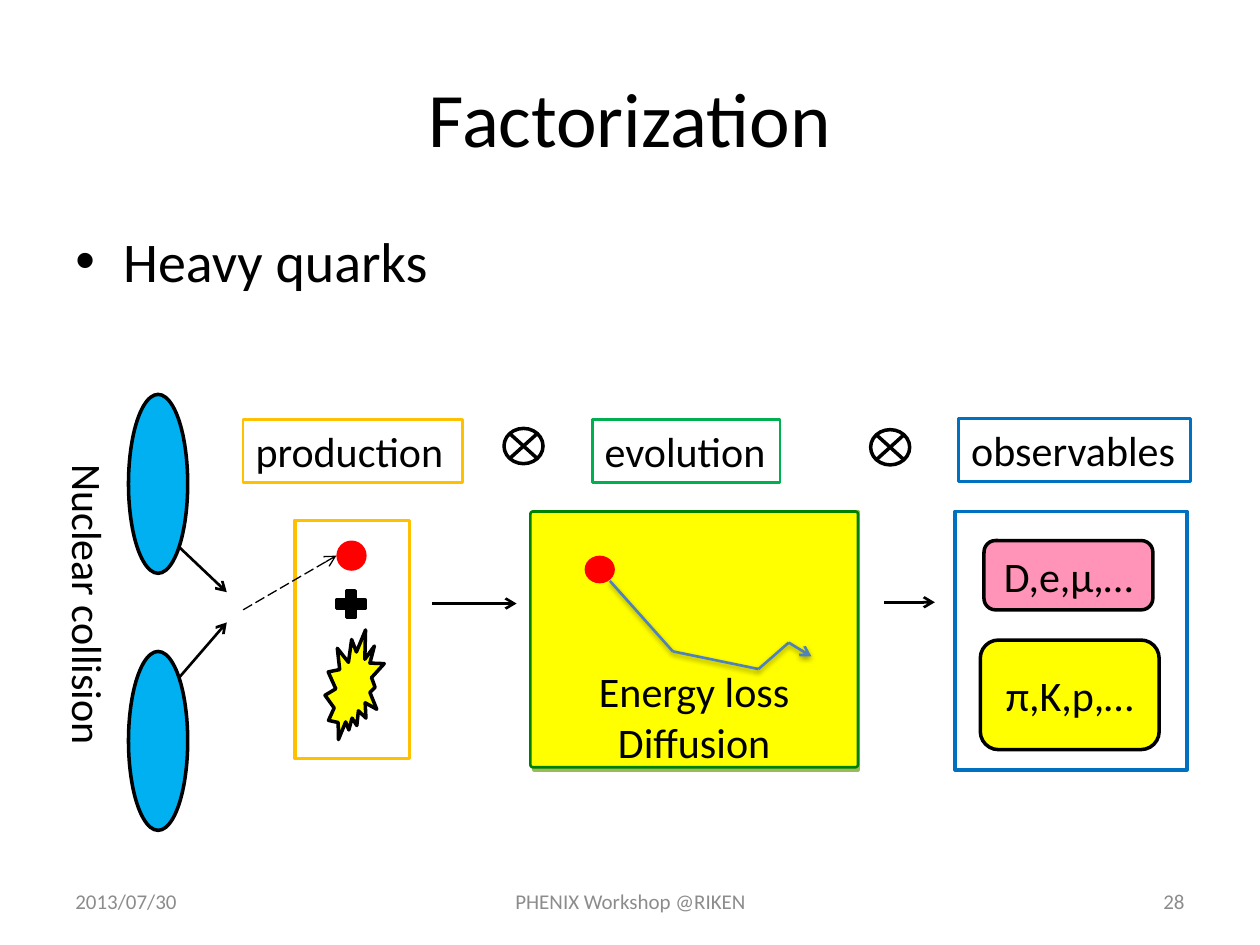
from lxml import etree
from pptx import Presentation
from pptx.dml.color import RGBColor
from pptx.enum.dml import MSO_LINE
from pptx.enum.shapes import MSO_CONNECTOR, MSO_SHAPE
from pptx.enum.text import MSO_ANCHOR, MSO_AUTO_SIZE, PP_ALIGN
from pptx.oxml.ns import qn
from pptx.util import Emu, Pt

PX = 9144  # EMU in one px, 100 px to the inch
FONT = "Calibri"

BLACK = RGBColor(0x00, 0x00, 0x00)
WHITE = RGBColor(0xFF, 0xFF, 0xFF)
GREY = RGBColor(0x8C, 0x8C, 0x8C)
SKY = RGBColor(0x00, 0xB0, 0xF0)
BLUE = RGBColor(0x00, 0x70, 0xC0)
STEEL = RGBColor(0x4F, 0x81, 0xBD)
GREEN = RGBColor(0x00, 0xB0, 0x50)
DARK_GREEN = RGBColor(0x00, 0x80, 0x00)
OLIVE = RGBColor(0x9B, 0xBB, 0x59)
AMBER = RGBColor(0xFF, 0xC0, 0x00)
YELLOW = RGBColor(0xFF, 0xFF, 0x00)
RED = RGBColor(0xFF, 0x00, 0x00)
PINK = RGBColor(0xFF, 0x93, 0xB8)

ELLIPSE = MSO_SHAPE.OVAL
RECT = MSO_SHAPE.RECTANGLE
ROUNDED = MSO_SHAPE.ROUNDED_RECTANGLE
BURST = MSO_SHAPE.EXPLOSION2
PLUS = MSO_SHAPE.MATH_PLUS
TENSOR = MSO_SHAPE.FLOWCHART_SUMMING_JUNCTION
STRAIGHT = MSO_CONNECTOR.STRAIGHT
LONG_DASH = MSO_LINE.LONG_DASH
TOP, MIDDLE, BOTTOM = MSO_ANCHOR.TOP, MSO_ANCHOR.MIDDLE, MSO_ANCHOR.BOTTOM
LEFT, CENTER, RIGHT = PP_ALIGN.LEFT, PP_ALIGN.CENTER, PP_ALIGN.RIGHT
GROW = MSO_AUTO_SIZE.SHAPE_TO_FIT_TEXT


def px(*lengths):
    return [Emu(length * PX) for length in lengths]


def write(shape, text, size=24, color=BLACK, align=LEFT, anchor=TOP, wrap=True):
    frame = shape.text_frame
    frame.text = text
    frame.word_wrap = wrap
    frame.vertical_anchor = anchor
    font_format = {"name": FONT, "size": Pt(size)}
    for para in frame.paragraphs:
        para.alignment = align
        for span in para.runs:
            for name, value in font_format.items():
                setattr(span.font, name, value)
            span.font.color.rgb = color


def add_text(page, box, text, **text_format):
    shape = page.shapes.add_textbox(*px(*box))
    write(shape, text, **text_format)
    return shape


def add_label(page, box, text, border=None):
    """Text in a box that fits it, with an optional border."""
    shape = add_text(page, box, text, wrap=False)
    shape.text_frame.auto_size = GROW
    if border is not None:
        shape.line.color.rgb = border
        shape.line.width = Pt(1.5)
    return shape


def add_shape(page, kind, box, fill=None, line=None, width=2):
    shape = page.shapes.add_shape(kind, *px(*box))
    shape.shadow.inherit = False
    if fill is None:
        shape.fill.background()
    else:
        shape.fill.solid()
        shape.fill.fore_color.rgb = fill
    if line is None:
        shape.line.fill.background()
    else:
        shape.line.color.rgb = line
        shape.line.width = Pt(width)
    return shape


def add_line(page, start, end, color=BLACK, width=1.5, dash=None, arrow=True, shadow=False):
    connector = page.shapes.add_connector(STRAIGHT, *px(*start, *end))
    connector.line.color.rgb = color
    connector.line.width = Pt(width)
    if dash is not None:
        connector.line.dash_style = dash
    properties = connector._element.spPr
    if arrow:
        etree.SubElement(properties.find(qn("a:ln")), qn("a:tailEnd"), type="arrow")
    effects = etree.SubElement(properties, qn("a:effectLst"))
    if shadow:
        outer = etree.SubElement(effects, qn("a:outerShdw"), blurRad=str(Pt(3.1)),
                                 dist=str(Pt(1.6)), dir="5400000", rotWithShape="0")
        black = etree.SubElement(outer, qn("a:srgbClr"), val=str(BLACK))
        etree.SubElement(black, qn("a:alpha"), val="38000")


def add_bullet(page, box, text):
    shape = add_text(page, box, text, size=32)
    properties = shape.text_frame.paragraphs[0]._p.get_or_add_pPr()
    indent = 38 * PX
    properties.set("marL", str(indent))
    properties.set("indent", str(-indent))
    before = etree.SubElement(properties, qn("a:spcBef"))
    etree.SubElement(before, qn("a:spcPct"), val="20000")
    etree.SubElement(properties, qn("a:buFont"), typeface="Arial")
    etree.SubElement(properties, qn("a:buChar"), char="•")


def add_page_text(page):
    title = page.shapes.title
    title.left, title.top, title.width, title.height = px(50, 30, 900, 125)
    write(title, "Factorization", size=44, align=CENTER, anchor=MIDDLE)
    add_bullet(page, (50, 175, 900, 495), "Heavy quarks")
    for left, width, text, align in (
        (50, 233, "2013/07/30", LEFT),
        (342, 317, "PHENIX Workshop @RIKEN", CENTER),
        (717, 233, "28", RIGHT),
    ):
        add_text(page, (left, 695, width, 40), text,
                 size=12, color=GREY, align=align, anchor=MIDDLE)


def add_collision(page):
    for top in (313, 517):
        add_shape(page, ELLIPSE, (102, top, 47, 142), SKY, BLACK)
    for start, end in (((142, 434), (180, 470)), ((142, 538), (180, 494))):
        add_line(page, start, end)
    add_label(page, (-52, 456, 245, 50), "Nuclear collision").rotation = 90


def add_production(page):
    add_label(page, (193, 333, 174, 50), "production", AMBER)
    add_shape(page, BURST, (258, 500, 47, 87), YELLOW, BLACK)
    add_shape(page, ELLIPSE, (267, 429, 24, 24), RED)
    add_shape(page, PLUS, (263, 465, 31, 29), BLACK, BLACK)
    add_shape(page, RECT, (234, 413, 91, 189), line=AMBER)
    add_line(page, (193, 484), (267, 441), width=0.75, dash=LONG_DASH)


def add_evolution(page):
    add_label(page, (470, 333, 149, 50), "evolution", GREEN)
    add_shape(page, RECT, (424, 406, 257, 205), WHITE, OLIVE)
    medium = add_shape(page, ROUNDED, (421, 406, 260, 203), YELLOW, DARK_GREEN, 1.5)
    medium.adjustments[0] = 0.01
    write(medium, "Energy loss\nDiffusion", align=CENTER, anchor=BOTTOM)
    medium.text_frame.margin_bottom = 0
    add_shape(page, ELLIPSE, (464, 441, 24, 22), RED)
    track = [(484, 461), (534, 517), (602, 531), (626, 510), (644, 521)]
    for start, end in zip(track, track[1:]):
        add_line(page, start, end, STEEL, arrow=end == track[-1], shadow=True)


def add_observables(page):
    add_label(page, (761, 332, 184, 50), "observables", BLUE)
    for box, fill, text in (
        ((778, 508, 142, 87), YELLOW, "π,K,p,…"),
        ((781, 429, 134, 55), PINK, "D,e,μ,…"),
    ):
        particles = add_shape(page, ROUNDED, box, fill, BLACK)
        write(particles, text, align=CENTER, anchor=MIDDLE)
    add_shape(page, RECT, (758, 406, 184, 205), line=BLUE)


def add_links(page):
    for start, end in (((343, 479), (410, 479)), ((702, 478), (742, 478))):
        add_line(page, start, end)
    for left, top in ((400, 340), (691, 341)):
        add_shape(page, TENSOR, (left, top, 31, 28), WHITE, BLACK)


def main():
    deck = Presentation()
    deck.slide_width, deck.slide_height = px(1000, 750)
    page = deck.slides.add_slide(deck.slide_layouts[5])
    add_page_text(page)
    add_collision(page)
    add_production(page)
    add_evolution(page)
    add_observables(page)
    add_links(page)
    deck.save("out.pptx")


if __name__ == "__main__":
    main()
